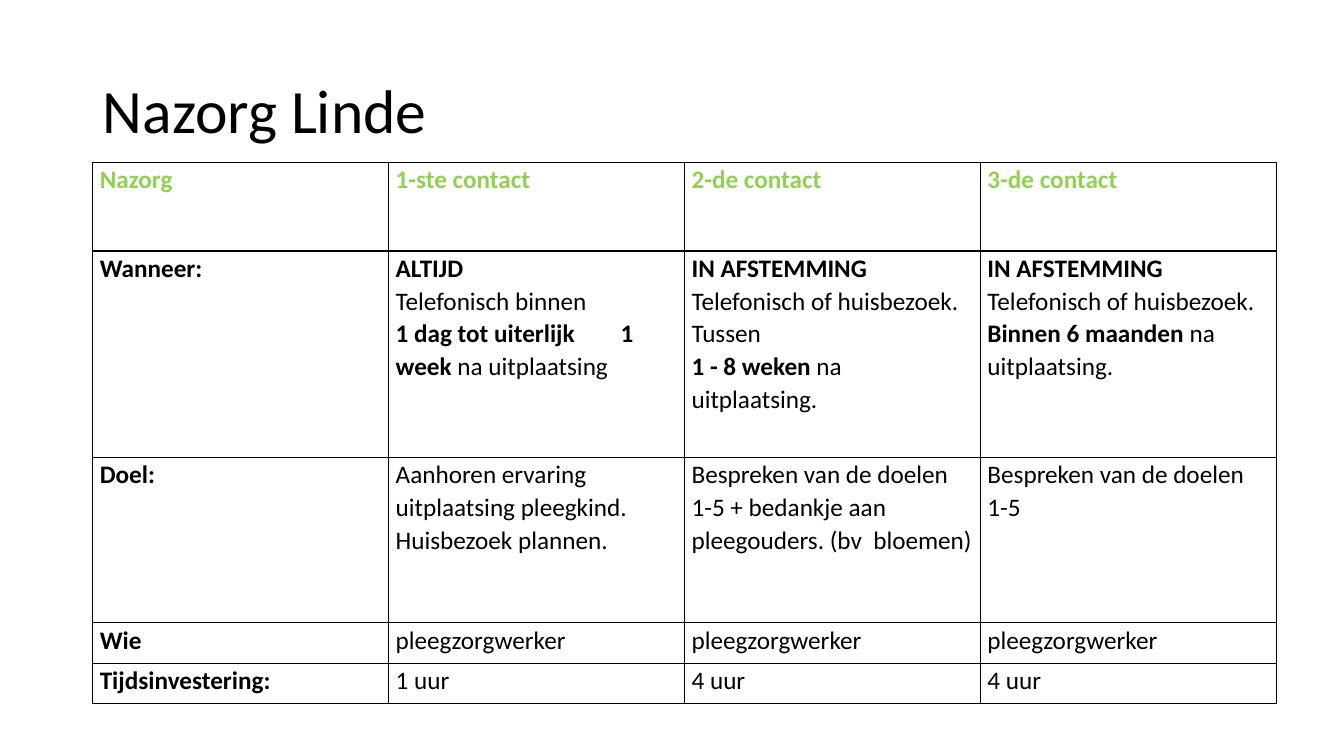
from lxml import etree
from pptx import Presentation
from pptx.dml.color import RGBColor
from pptx.enum import text
from pptx.oxml import ns
from pptx.util import Inches, Pt

COLORS = {"text": "000000", "heading": "92D050", "border": "000000"}
ROW_HEIGHTS = [0.88, 2.05, 1.64, 0.4, 0.4]
GAP_STOP = Inches(2.23)
BOLD_MARK = "*"

ROWS = [
    [["*Nazorg*"], ["*1-ste contact*"], ["*2-de contact*"], ["*3-de contact*"]],
    [
        ["*Wanneer:*"],
        ["*ALTIJD*", "Telefonisch binnen",
         "*1 dag tot uiterlijk\t1 week* na uitplaatsing"],
        ["*IN AFSTEMMING*", "Telefonisch of huisbezoek. Tussen",
         "*1 - 8 weken* na uitplaatsing."],
        ["*IN AFSTEMMING*",
         "Telefonisch of huisbezoek. *Binnen 6 maanden* na uitplaatsing."],
    ],
    [
        ["*Doel:*"],
        ["Aanhoren ervaring uitplaatsing pleegkind. Huisbezoek plannen."],
        ["Bespreken van de doelen 1-5 + bedankje aan pleegouders. (bv  bloemen)"],
        ["Bespreken van de doelen 1-5"],
    ],
    [["*Wie*"]] + [["pleegzorgwerker"]] * 3,
    [["*Tijdsinvestering:*"], ["1 uur"], ["4 uur"], ["4 uur"]],
]


def set_attributes(target, values):
    """Set every named format value on the target."""
    for name, value in values.items():
        setattr(target, name, value)


def add_run(paragraph, wording, size, color, bold=False):
    """Append a formatted run to the paragraph."""
    run = paragraph.add_run()
    run.text = wording
    set_attributes(run.font, {"name": "Calibri", "size": Pt(size), "bold": bold})
    run.font.color.rgb = RGBColor.from_string(COLORS[color])


def add_borders(cell):
    """Draw a thin line on all four sides of the cell."""
    properties = cell._tc.get_or_add_tcPr()
    for side in ("a:lnL", "a:lnR", "a:lnT", "a:lnB"):
        line = etree.SubElement(properties, ns.qn(side), w=str(Pt(1)))
        fill = etree.SubElement(line, ns.qn("a:solidFill"))
        etree.SubElement(fill, ns.qn("a:srgbClr"), val=COLORS["border"])


def add_tab_stop(paragraph, position):
    """Give the paragraph one left tab stop."""
    properties = paragraph._p.get_or_add_pPr()
    stops = etree.SubElement(properties, ns.qn("a:tabLst"))
    etree.SubElement(stops, ns.qn("a:tab"), pos=str(position), algn="l")


def fill_cell(cell, paragraphs, color):
    """Format one table cell and write its paragraphs."""
    add_borders(cell)
    cell.fill.background()
    set_attributes(cell, {
        "margin_left": Inches(0.07), "margin_right": Inches(0.07),
        "margin_top": 0, "margin_bottom": 0,
        "vertical_anchor": text.MSO_ANCHOR.TOP,
    })
    frame = cell.text_frame
    for index, wording in enumerate(paragraphs):
        paragraph = frame.add_paragraph() if index else frame.paragraphs[0]
        paragraph.line_spacing = 1.07
        if "\t" in wording:
            add_tab_stop(paragraph, GAP_STOP)
        for part, piece in enumerate(wording.split(BOLD_MARK)):
            if piece:
                add_run(paragraph, piece, 18, color, bold=part % 2 == 1)


def place_title(slide, left, top, width, height):
    """Move the title placeholder into its box and write the title."""
    title = slide.shapes.title
    set_attributes(title, {"left": left, "top": top, "width": width, "height": height})
    set_attributes(title.text_frame, {
        "vertical_anchor": text.MSO_ANCHOR.MIDDLE,
        "auto_size": text.MSO_AUTO_SIZE.NONE, "word_wrap": True,
    })
    paragraph = title.text_frame.paragraphs[0]
    set_attributes(paragraph, {"alignment": text.PP_ALIGN.LEFT, "line_spacing": 0.9})
    add_run(paragraph, "Nazorg Linde", 44, "text")


def place_contact_table(slide, left, top, width, height):
    """Build the aftercare table with equal columns in its box."""
    columns = len(ROWS[0])
    table = slide.shapes.add_table(len(ROWS), columns, left, top, width, height).table
    set_attributes(table, {"first_row": False, "horz_banding": False})
    for column in table.columns:
        column.width = width // columns
    for index, (row, contents) in enumerate(zip(table.rows, ROWS)):
        row.height = Inches(ROW_HEIGHTS[index])
        for cell, paragraphs in zip(row.cells, contents):
            fill_cell(cell, paragraphs, "text" if index else "heading")


def main():
    """Build and save the presentation."""
    presentation = Presentation()
    set_attributes(presentation, {"slide_width": Inches(13.33), "slide_height": Inches(7.5)})
    slide = presentation.slides.add_slide(presentation.slide_layouts[5])
    place_title(slide, Inches(0.92), Inches(0.4), Inches(11.5), Inches(1.45))
    place_contact_table(slide, Inches(0.92), Inches(1.61), Inches(11.74),
                        Inches(sum(ROW_HEIGHTS)))
    presentation.save("out.pptx")


if __name__ == "__main__":
    main()
